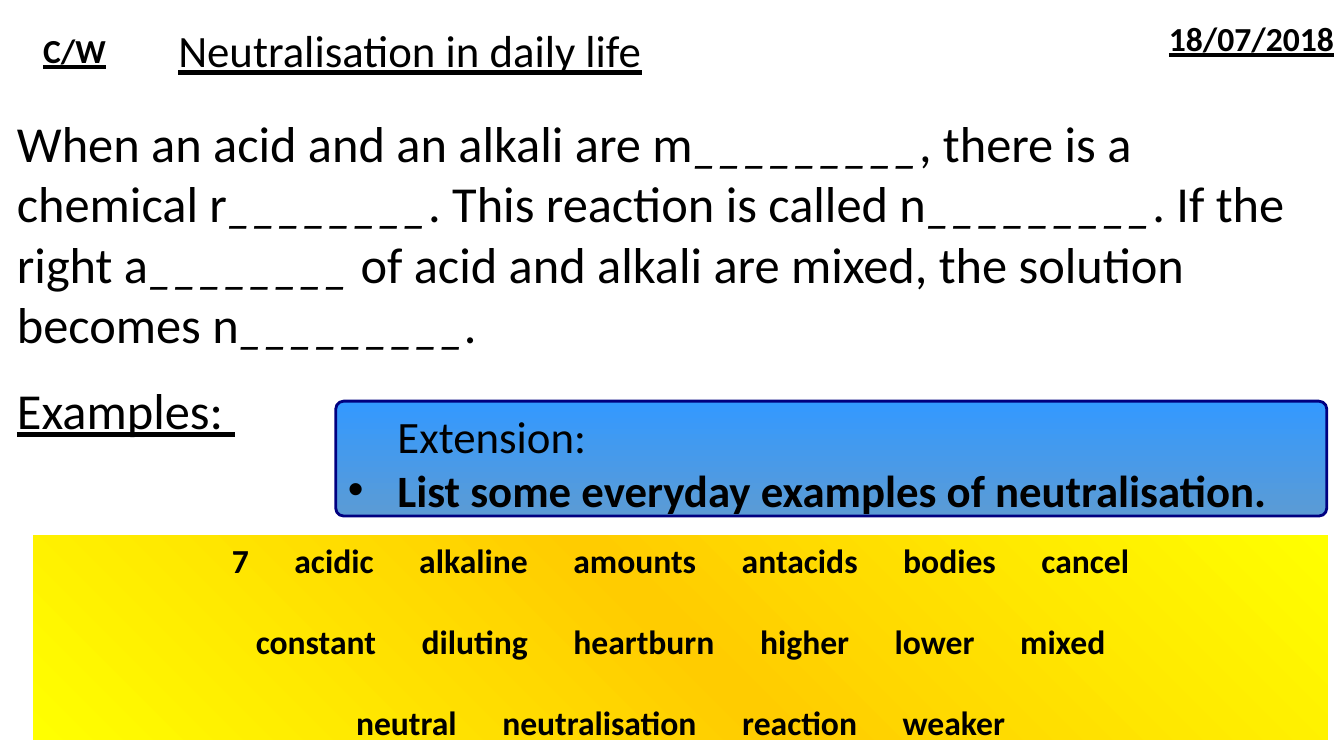
from lxml import etree
from pptx import Presentation
from pptx.dml.color import RGBColor
from pptx.enum.shapes import MSO_SHAPE
from pptx.enum.text import MSO_ANCHOR, PP_ALIGN
from pptx.oxml import parse_xml
from pptx.oxml.ns import nsdecls, qn
from pptx.util import Inches, Pt

FONT = "Calibri"
BLACK = "000000"
WORD_GAP = 27.1  # points added after each space in the word bank
WORD_BANK = [
    "7 acidic alkaline amounts antacids bodies cancel",
    "constant diluting heartburn higher lower mixed",
    "neutral neutralisation reaction weaker",
]
GAP_FILL = [
    "When an acid and an alkali are m", "_________",
    ", there is a chemical r", "________",
    ". This reaction is called n", "_________",
    ". If the right a", "________",
    " of acid and alkali are mixed, the solution becomes n", "_________.",
]


def colour(value):
    return RGBColor.from_string(value)


def style(span, size, bold=False, underline=False, italic=False):
    font = span.font
    font.name, font.size = FONT, Pt(size)
    font.bold, font.underline, font.italic = bold, underline, italic
    font.color.rgb = colour(BLACK)


def add_span(para, text, size, **look):
    span = para.add_run()
    span.text = text
    style(span, size, **look)
    return span


def add_text_box(page, box):
    frame = page.shapes.add_textbox(*map(Inches, box)).text_frame
    frame.word_wrap = True
    return frame


def add_panel(page, kind, box, stops, angle):
    """Add a shape with a linear gradient; angle is clockwise in degrees."""
    panel = page.shapes.add_shape(kind, *map(Inches, box))
    panel.shadow.inherit = False
    panel.line.fill.background()
    panel.fill.gradient()
    gradient = panel.fill._fill._gradFill
    for child in list(gradient):
        gradient.remove(child)
    stop_list = etree.SubElement(gradient, qn("a:gsLst"))
    for position, value in stops:
        stop = etree.SubElement(stop_list, qn("a:gs"), pos=str(position * 1000))
        etree.SubElement(stop, qn("a:srgbClr"), val=value)
    etree.SubElement(gradient, qn("a:lin"), ang=str(angle * 60000), scaled="1")
    frame = panel.text_frame
    frame.word_wrap = True
    frame.vertical_anchor = MSO_ANCHOR.TOP
    return panel


def add_heading(page, box, text, size, bold=True, align=PP_ALIGN.LEFT):
    frame = add_text_box(page, box)
    para = frame.paragraphs[0]
    para.alignment = align
    add_span(para, text, size, bold=bold, underline=True)
    return frame


def add_header(page, box):
    left, top, width, height = box
    title = add_heading(page, (left + 1.67, top, 9, height),
                        "Neutralisation in daily life", 32, bold=False)
    title.vertical_anchor = MSO_ANCHOR.MIDDLE
    title.paragraphs[0].line_spacing = 0.9
    add_heading(page, (left + 0.33, top + 0.25, 1.34, 0.5), "C/W", 24)
    add_heading(page, (left + width - 3.11, top + 0.13, 3.11, 0.5),
                "18/07/2018", 24, align=PP_ALIGN.RIGHT)


def add_gap_fill(page, box):
    frame = add_text_box(page, box)
    for index, text in enumerate(GAP_FILL):
        add_span(frame.paragraphs[0], text, 36, italic=index % 2 == 1)
    examples = frame.add_paragraph()
    examples.space_before = Pt(18)
    add_span(examples, "Examples: ", 36, underline=True)


def add_word_bank(page, box):
    stops = [(0, "FFFF00"), (50, "FFCC00"), (100, "FFFF00")]
    frame = add_panel(page, MSO_SHAPE.RECTANGLE, box, stops, 315).text_frame
    for row, line in enumerate(WORD_BANK):
        para = frame.add_paragraph() if row else frame.paragraphs[0]
        para.alignment = PP_ALIGN.CENTER
        if row:
            para.space_before = Pt(29)
        for column, word in enumerate(line.split()):
            if column:
                gap = add_span(para, " ", 24, bold=True)
                gap.font._rPr.set("spc", str(round(WORD_GAP * 100)))
            add_span(para, word, 24, bold=True)


def add_extension(page, box):
    stops = [(0, "3399FF"), (100, "5B9BD5")]
    panel = add_panel(page, MSO_SHAPE.ROUNDED_RECTANGLE, box, stops, 90)
    panel.adjustments[0] = 0.07
    panel.line.color.rgb = colour("000080")
    panel.line.width = Pt(2)
    frame = panel.text_frame
    # Both lines share one indent; the second hangs its bullet to the left
    for bulleted, text in enumerate(
            ["Extension:", "List some everyday examples of neutralisation."]):
        para = frame.add_paragraph() if bulleted else frame.paragraphs[0]
        para.alignment = PP_ALIGN.LEFT
        properties = para._p.get_or_add_pPr()
        properties.set("marL", str(Inches(0.49)))
        if bulleted:
            properties.set("indent", str(-Inches(0.49)))
            properties.append(parse_xml(
                f'<a:buFont {nsdecls("a")} typeface="Arial"/>'))
            properties.append(parse_xml(
                f'<a:buChar {nsdecls("a")} char="•"/>'))
        add_span(para, text, 32, bold=bool(bulleted))


def main():
    deck = Presentation()
    deck.slide_width, deck.slide_height = Inches(13.33), Inches(7.5)
    page = deck.slides.add_slide(deck.slide_layouts[6])
    add_header(page, (0, 0, 13.33, 1.06))
    add_gap_fill(page, (0.07, 1.06, 13.1, 3.43))
    add_word_bank(page, (0.33, 5.31, 12.84, 2.03))
    add_extension(page, (3.33, 3.98, 9.83, 1.14))
    deck.save("out.pptx")


if __name__ == "__main__":
    main()
